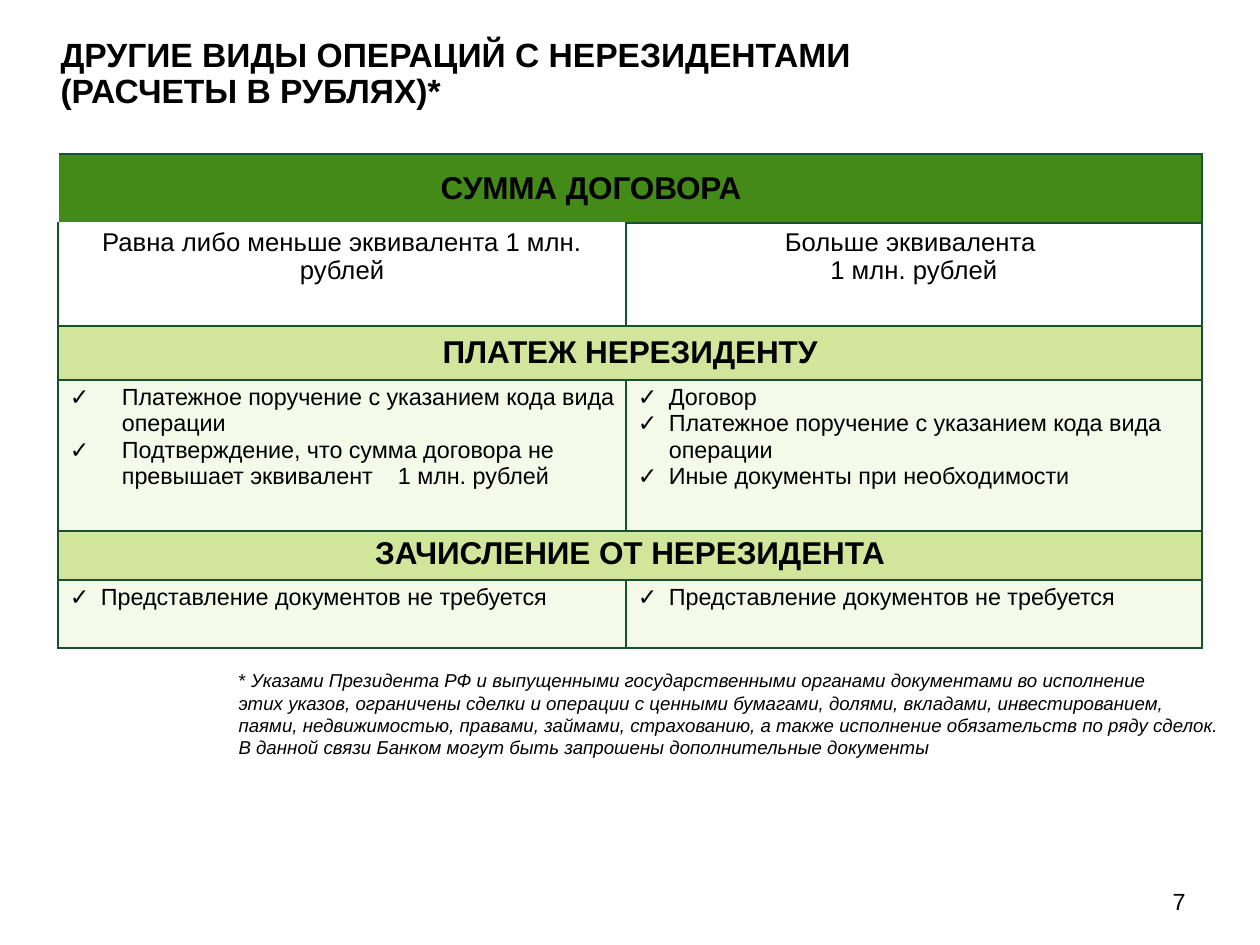
from dataclasses import dataclass

from lxml.etree import SubElement
from pptx import Presentation
from pptx.dml.color import RGBColor
from pptx.enum.text import MSO_ANCHOR, PP_ALIGN
from pptx.oxml.ns import qn
from pptx.util import Emu, Pt


@dataclass(frozen=True)
class Theme:
    """Colours, font and type sizes of the slide."""
    font: str = "Arial"
    ink: str = "000000"
    white: str = "FFFFFF"
    line: str = "19502E"
    header: str = "448A18"
    section: str = "A6CE39"
    body: str = "EDF5D7"
    title_size: float = 14.4
    head_size: float = 13.5
    sum_size: float = 11
    body_size: float = 10
    note_size: float = 8


T = Theme()
COLS = (568, 576)
ROWS = (69, 103, 54, 151, 49, 68)
NO_PAPERS = "Представление документов не требуется"


def px(n):
    """Turn pixels into EMU at 168 px to the inch."""
    return Emu(round(n * 914400 / 168))


def add_run(p, text, size, bold=False, italic=False):
    """Add one run in the theme font."""
    r = p.add_run()
    r.text = text
    r.font.name, r.font.size = T.font, Pt(size)
    r.font.bold, r.font.italic = bold, italic
    r.font.color.rgb = RGBColor.from_string(T.ink)


def paragraphs(tf, count):
    """Return the given number of paragraphs of a text frame."""
    return [tf.paragraphs[0]] + [tf.add_paragraph() for _ in range(count - 1)]


def text_box(s, box, anchor=MSO_ANCHOR.TOP):
    """Add a wrapping text box and return its frame."""
    tf = s.shapes.add_textbox(*map(px, box)).text_frame
    tf.word_wrap, tf.vertical_anchor = True, anchor
    return tf


def set_bullet(p, indent, tab=None):
    """Give a paragraph a check mark, a hanging indent and a tab stop."""
    pPr = p._p.get_or_add_pPr()
    pPr.set("marL", str(px(indent)))
    pPr.set("indent", str(-px(indent)))
    SubElement(pPr, qn("a:buFont"), typeface=T.font)
    SubElement(pPr, qn("a:buChar"), char="✓")
    if tab:
        tabs = SubElement(pPr, qn("a:tabLst"))
        SubElement(tabs, qn("a:tab"), pos=str(px(tab)), algn="l")


def set_borders(cell, white=""):
    """Draw the four cell borders, with the named sides in white."""
    tcPr = cell._tc.get_or_add_tcPr()
    for i, side in enumerate("LRTB"):
        ln = SubElement(tcPr, qn(f"a:ln{side}"), w=str(Pt(0.75)))
        fill = SubElement(ln, qn("a:solidFill"))
        SubElement(fill, qn("a:srgbClr"), val=T.white if side in white else T.line)
        tcPr.insert(i, ln)


def set_fill(cell, color, alpha=None):
    """Fill a cell with a colour, or leave it clear."""
    if color is None:
        cell.fill.background()
        return
    cell.fill.solid()
    cell.fill.fore_color.rgb = RGBColor.from_string(color)
    if alpha:
        clr = cell._tc.tcPr.find(".//" + qn("a:srgbClr"))
        SubElement(clr, qn("a:alpha"), val=str(alpha * 1000))


def set_margins(cell, side=12):
    """Set the inner margins of a cell."""
    cell.margin_left = cell.margin_right = px(side)
    cell.margin_top = cell.margin_bottom = px(5)


def band(table, row, text, color, alpha=None, anchor=MSO_ANCHOR.MIDDLE, white=""):
    """Fill a row that spans both columns with a bold heading."""
    cell, last = table.cell(row, 0), table.cell(row, 1)
    cell.merge(last)
    for c, sides in ((cell, white), (last, "")):
        set_fill(c, color, alpha)
        set_borders(c, sides)
    set_margins(cell)
    cell.vertical_anchor = anchor
    p = cell.text_frame.paragraphs[0]
    p.alignment = PP_ALIGN.CENTER
    add_run(p, text, T.head_size, bold=True)
    return cell


def sum_cell(cell, lines, white=""):
    """Write a centred contract sum."""
    set_fill(cell, None)
    set_borders(cell, white)
    set_margins(cell)
    for p, line in zip(paragraphs(cell.text_frame, len(lines)), lines):
        p.alignment = PP_ALIGN.CENTER
        add_run(p, line, T.sum_size)


def list_cell(cell, items, indent=31):
    """Write a list of required documents with check marks."""
    set_fill(cell, T.body, 50)
    set_borders(cell)
    set_margins(cell)
    for p, item in zip(paragraphs(cell.text_frame, len(items)), items):
        set_bullet(p, indent, 328 if "\t" in item else None)
        add_run(p, item, T.body_size)


def payments_table(s, box):
    """Place the table of documents by contract sum."""
    frame = s.shapes.add_table(len(ROWS), len(COLS), *map(px, box))
    table = frame.table
    table.first_row = table.horz_banding = False
    for col, w in zip(table.columns, COLS):
        col.width = px(w)
    for row, h in zip(table.rows, ROWS):
        row.height = px(h)
    head = band(table, 0, "СУММА ДОГОВОРА", T.header, white="LB")
    set_margins(head, 5)
    head.margin_right = px(83)
    sum_cell(table.cell(1, 0), ["Равна либо меньше эквивалента 1 млн. рублей"], "T")
    sum_cell(table.cell(1, 1), ["Больше эквивалента ", "1 млн. рублей"])
    band(table, 2, "ПЛАТЕЖ НЕРЕЗИДЕНТУ", T.section, 50)
    list_cell(table.cell(3, 0), [
        "Платежное поручение с указанием кода вида операции",
        "Подтверждение, что сумма договора не превышает эквивалент\t1 млн. рублей",
    ], 52)
    list_cell(table.cell(3, 1), [
        "Договор",
        "Платежное поручение с указанием кода вида операции",
        "Иные документы при необходимости",
    ])
    band(table, 4, "ЗАЧИСЛЕНИЕ ОТ НЕРЕЗИДЕНТА", T.section, 50, MSO_ANCHOR.TOP)
    for col in range(len(COLS)):
        list_cell(table.cell(5, col), [NO_PAPERS])


def title(s, box):
    """Place the two-line title."""
    p = text_box(s, box, MSO_ANCHOR.BOTTOM).paragraphs[0]
    p.line_spacing = 0.9
    add_run(p, "ДРУГИЕ ВИДЫ ОПЕРАЦИЙ С НЕРЕЗИДЕНТАМИ ", T.title_size, bold=True)
    p.add_line_break()
    add_run(p, "(РАСЧЕТЫ В РУБЛЯХ)*", T.title_size, bold=True)


def footnote(s, box):
    """Place the note under the table."""
    lines = [
        "Указами Президента РФ и выпущенными государственными органами документами во исполнение",
        "этих указов, ограничены сделки и операции с ценными бумагами, долями, вкладами, инвестированием,",
        "паями, недвижимостью, правами, займами, страхованию, а также исполнение обязательств по ряду сделок.",
        "В данной связи Банком могут быть запрошены дополнительные документы",
    ]
    ps = paragraphs(text_box(s, box), len(lines))
    add_run(ps[0], "* ", T.note_size)
    for p, line in zip(ps, lines):
        add_run(p, line, T.note_size, italic=True)


def page_number(s, box):
    """Place the page number."""
    p = text_box(s, box, MSO_ANCHOR.MIDDLE).paragraphs[0]
    p.alignment = PP_ALIGN.RIGHT
    add_run(p, "7", T.body_size)


def main():
    """Build the slide and save it."""
    prs = Presentation()
    prs.slide_width, prs.slide_height = px(1260), px(945)
    s = prs.slides.add_slide(prs.slide_layouts[6])
    payments_table(s, (58, 154, sum(COLS), sum(ROWS)))
    title(s, (44, 29, 1159, 90))
    page_number(s, (1074, 876, 128, 50))
    footnote(s, (222, 661, 1036, 107))
    prs.save("out.pptx")


if __name__ == "__main__":
    main()
